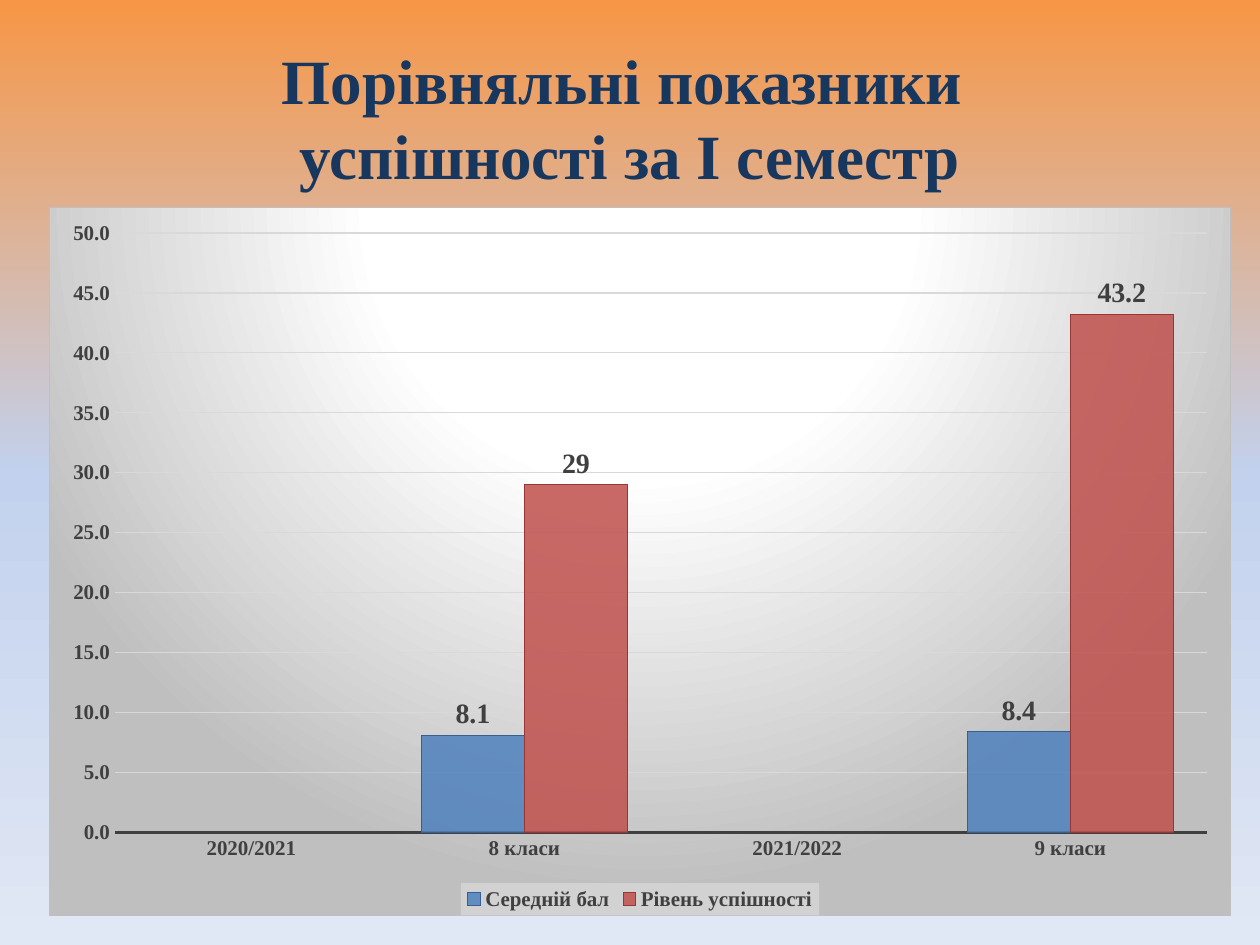
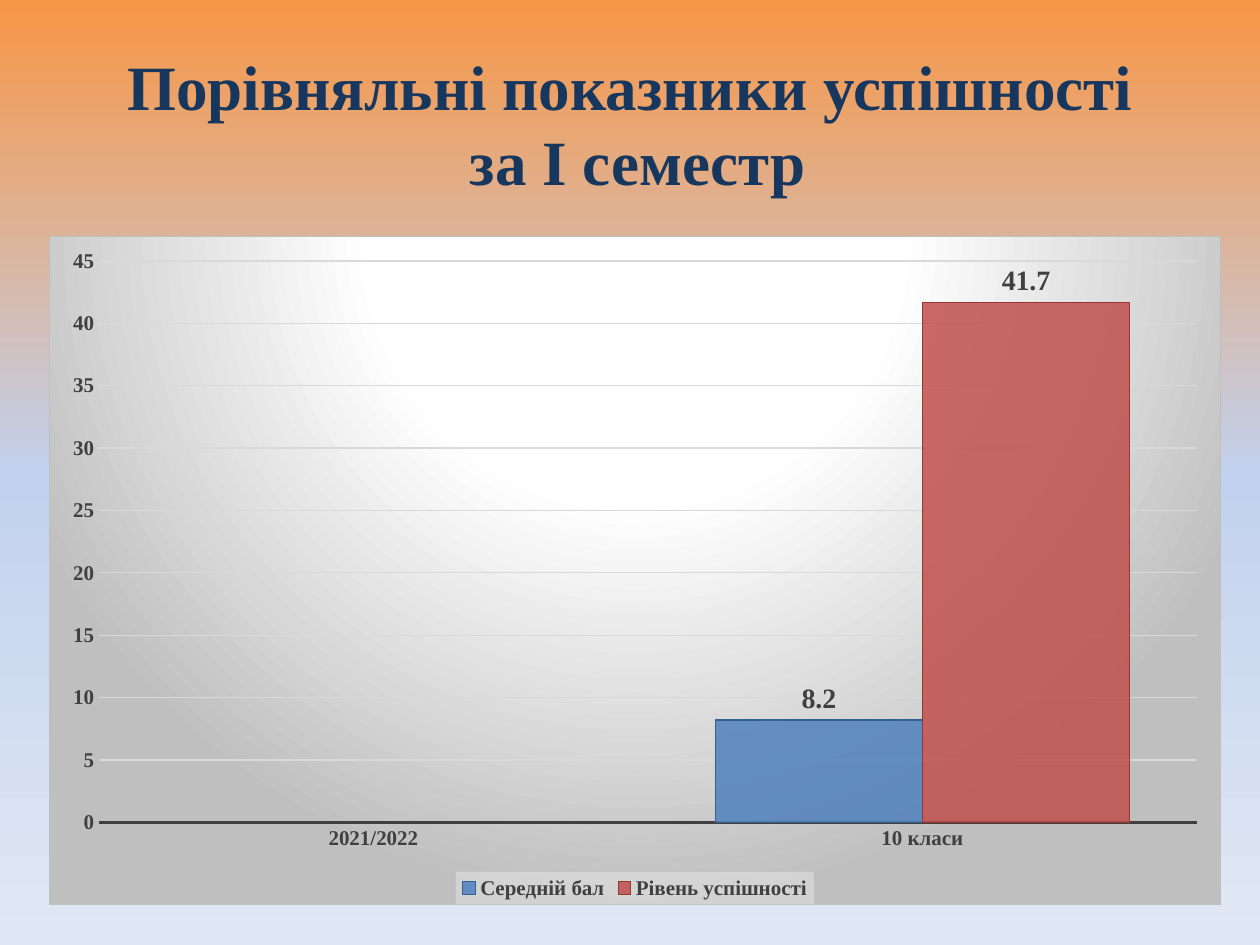
import dataclasses

import lxml.etree
import pptx
import pptx.chart.data
import pptx.dml.color
import pptx.enum.chart
import pptx.oxml
import pptx.oxml.ns
import pptx.util

SCALE = pptx.util.Inches(1) / 126


@dataclasses.dataclass(frozen=True)
class Theme:
    font: str = "Times New Roman"
    title: str = "17375E"
    label: str = "404040"
    grid: str = "D9D9D9"
    border: str = "BFBFBF"
    legend: str = "F2F2F2"
    bars: tuple = (("4F81BD", "376092"), ("C0504D", "953735"))
    background: tuple = ((0, "F79646"), (50, "C2D1ED"), (100, "E1E8F5"))
    chart_area: tuple = ((0, "FFFFFF"), (39, "FFFFFF"), (100, "BFBFBF"))
    title_size: int = 36
    axis_size: int = 12
    value_size: int = 16
    thin: float = 0.75
    thick: float = 1.5


theme = Theme()
rgb = pptx.dml.color.RGBColor.from_string
namespaces = pptx.oxml.ns.nsdecls("a", "c")


def style_font(font, size, color):
    font.name = theme.font
    font.size = pptx.util.Pt(size)
    font.bold = True
    font.color.rgb = rgb(color)


def gradient_xml(stops, direction):
    stop_list = "".join(
        f'<a:gs pos="{position * 1000}"><a:srgbClr val="{color}"/></a:gs>'
        for position, color in stops
    )
    return (f'<a:gradFill {namespaces} rotWithShape="1">'
            f"<a:gsLst>{stop_list}</a:gsLst>{direction}</a:gradFill>")


slides = [
    {
        "title": ("Порівняльні показники ", "успішності за І семестр"),
        "title_box": (63, 38, 1134, 158),
        "chart_box": (49, 207, 1182, 709),
        "categories": ("2020/2021", "8 класи", "2021/2022", "9 класи"),
        "series": {
            "Середній бал": ((None, 8.1, None, 8.4), "0.0"),
            "Рівень успішності": ((None, 29, None, 43.2), "General"),
        },
        "axis_maximum": 50,
        "axis_format": "0.0",
    },
    {
        "title": ("Порівняльні показники успішності", " за І семестр"),
        "title_box": (63, 0, 1134, 246),
        "chart_box": (49, 236, 1172, 669),
        "categories": ("2021/2022", "10 класи"),
        "series": {
            "Середній бал": ((None, 8.2), "General"),
            "Рівень успішності": ((None, 41.7), "General"),
        },
        "axis_maximum": 45,
        "axis_format": "General",
    },
]

presentation = pptx.Presentation()
presentation.slide_width = round(1260 * SCALE)
presentation.slide_height = round(945 * SCALE)

master = presentation.slide_master
master.background.fill.solid()
background_fill = master.element.xpath("p:cSld/p:bg/p:bgPr/a:solidFill")[0]
background_fill.getparent().replace(background_fill, pptx.oxml.parse_xml(
    gradient_xml(theme.background, '<a:lin ang="5400000" scaled="0"/>')))

for content in slides:
    slide = presentation.slides.add_slide(presentation.slide_layouts[5])

    title = slide.shapes.title
    title.left, title.top, title.width, title.height = (
        round(length * SCALE) for length in content["title_box"])
    paragraph = title.text_frame.paragraphs[0]
    for index, line in enumerate(content["title"]):
        if index:
            paragraph.add_line_break()
        run = paragraph.add_run()
        run.text = line
        style_font(run.font, theme.title_size, theme.title)

    chart_data = pptx.chart.data.CategoryChartData()
    chart_data.categories = content["categories"]
    for name, (values, number_format) in content["series"].items():
        chart_data.add_series(name, values, number_format)
    chart = slide.shapes.add_chart(
        pptx.enum.chart.XL_CHART_TYPE.COLUMN_CLUSTERED,
        *(round(length * SCALE) for length in content["chart_box"]),
        chart_data,
    ).chart
    chart.has_title = False
    style_font(chart.font, theme.axis_size, theme.label)
    area_fill = gradient_xml(
        theme.chart_area,
        '<a:path path="circle"><a:fillToRect l="50000" t="-80000" '
        'r="50000" b="180000"/></a:path>')
    chart.element.find(pptx.oxml.ns.qn("c:txPr")).addprevious(pptx.oxml.parse_xml(
        f"<c:spPr {namespaces}>{area_fill}"
        f'<a:ln w="{pptx.util.Pt(theme.thin)}"><a:solidFill>'
        f'<a:srgbClr val="{theme.border}"/></a:solidFill></a:ln></c:spPr>'))

    chart.has_legend = True
    legend = chart.legend
    legend.position = pptx.enum.chart.XL_LEGEND_POSITION.BOTTOM
    legend.include_in_layout = False
    style_font(legend.font, theme.axis_size, theme.label)
    legend.font._element.xpath("ancestor::c:txPr")[0].addprevious(pptx.oxml.parse_xml(
        f'<c:spPr {namespaces}><a:solidFill><a:srgbClr val="{theme.legend}">'
        '<a:alpha val="39000"/></a:srgbClr></a:solidFill></c:spPr>'))

    for axis in (chart.category_axis, chart.value_axis):
        axis.major_tick_mark = pptx.enum.chart.XL_TICK_MARK.NONE
        axis.minor_tick_mark = pptx.enum.chart.XL_TICK_MARK.NONE
        style_font(axis.tick_labels.font, theme.axis_size, theme.label)
    chart.category_axis.format.line.color.rgb = rgb(theme.label)
    chart.category_axis.format.line.width = pptx.util.Pt(theme.thick)

    value_axis = chart.value_axis
    value_axis.format.line.fill.background()
    value_axis.minimum_scale = 0
    value_axis.maximum_scale = content["axis_maximum"]
    value_axis.major_unit = 5
    value_axis.tick_labels.number_format = content["axis_format"]
    value_axis.tick_labels.number_format_is_linked = False
    value_axis.major_gridlines.format.line.color.rgb = rgb(theme.grid)
    value_axis.major_gridlines.format.line.width = pptx.util.Pt(theme.thin)

    plot = chart.plots[0]
    plot.gap_width = 65
    plot.overlap = 0
    plot.vary_by_categories = False
    for series, (fill, outline) in zip(plot.series, theme.bars):
        series.invert_if_negative = False
        series.format.fill.solid()
        series.format.fill.fore_color.rgb = rgb(fill)
        bar_color = series.format.fill._xPr.xpath("a:solidFill/a:srgbClr")[0]
        lxml.etree.SubElement(bar_color, pptx.oxml.ns.qn("a:alpha"), val="85000")
        series.format.line.color.rgb = rgb(outline)
        series.format.line.width = pptx.util.Pt(theme.thin)
        labels = series.data_labels
        labels.show_value = True
        labels.position = pptx.enum.chart.XL_LABEL_POSITION.OUTSIDE_END
        labels.number_format = content["series"][series.name][1]
        labels.number_format_is_linked = False
        style_font(labels.font, theme.value_size, theme.label)

presentation.save("out.pptx")
